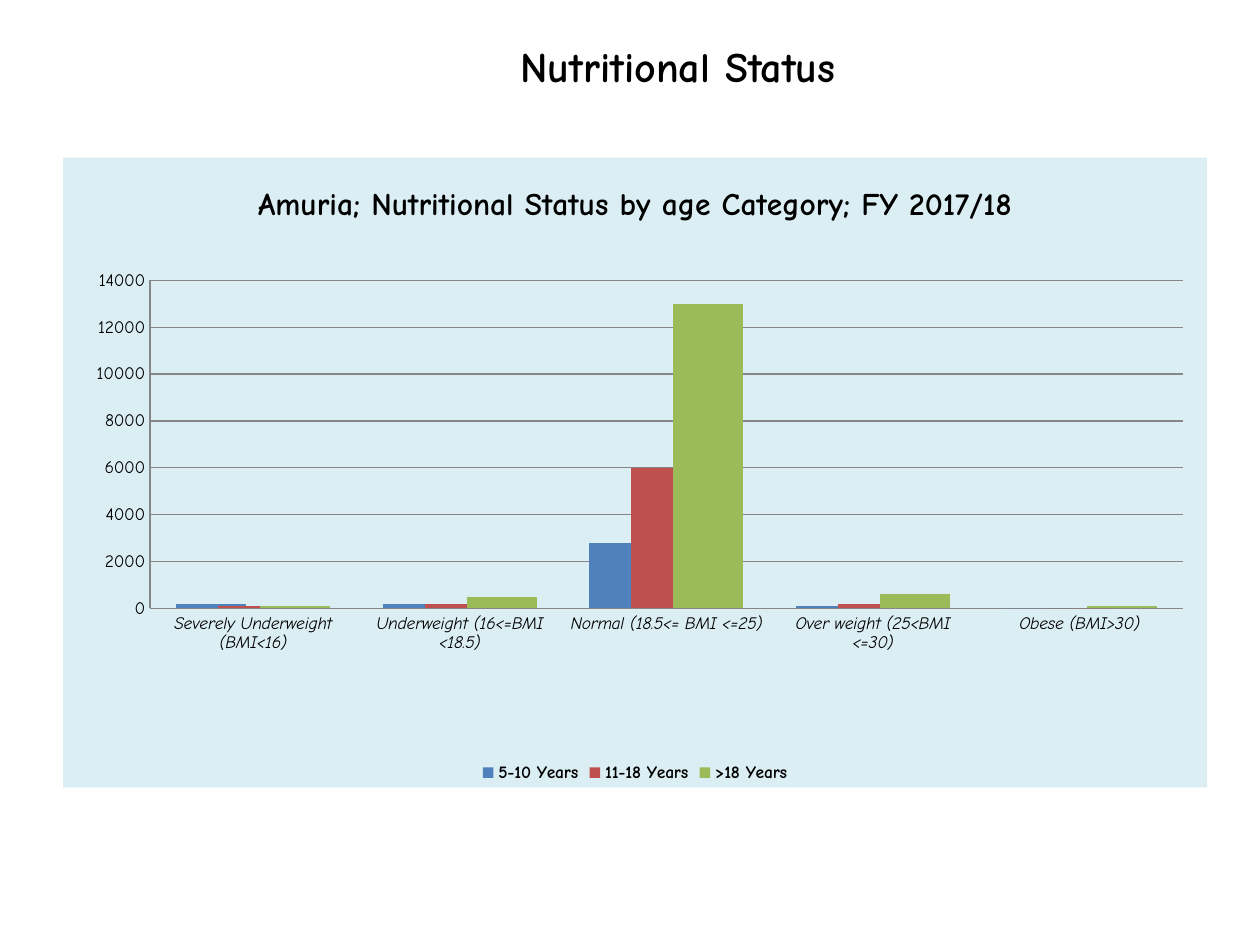
from lxml import etree
from pptx import Presentation
from pptx.chart.data import CategoryChartData
from pptx.dml.color import RGBColor
from pptx.enum.chart import XL_CHART_TYPE, XL_LEGEND_POSITION, XL_TICK_MARK
from pptx.enum.text import MSO_ANCHOR, PP_ALIGN
from pptx.oxml import parse_xml
from pptx.oxml.ns import nsdecls, qn
from pptx.util import Inches, Pt

FONT = "Comic Neue"
COLORS = {
    "background": "FFFFFF", "text": "000000", "panel": "DBEEF4", "grid": "868686",
    "5-10 Years": "4F81BD", "11-18 Years": "C0504D", ">18 Years": "9BBB59",
}
CATEGORIES = [
    "Severely Underweight (BMI<16)", "Underweight (16<=BMI <18.5)",
    "Normal (18.5<= BMI <=25)", "Over weight (25<BMI <=30)", "Obese (BMI>30)",
]
COUNTS = {
    "5-10 Years": [200, 200, 2800, 100, 0],
    "11-18 Years": [100, 200, 6000, 200, 0],
    ">18 Years": [100, 500, 13000, 600, 100],
}


def color(name):
    return RGBColor.from_string(COLORS[name])


def style_font(font, size, bold=False, italic=False):
    font.name, font.size = FONT, Pt(size)
    font.bold, font.italic = bold, italic
    font.color.rgb = color("text")


def write_text(frame, text, size, **style):
    frame.text = text
    para = frame.paragraphs[0]
    para.alignment = PP_ALIGN.CENTER
    style_font(para.runs[0].font, size, **style)


def add_heading(page, box, text):
    title = page.shapes.title
    title.left, title.top, title.width, title.height = box
    title.text_frame.vertical_anchor = MSO_ANCHOR.MIDDLE
    write_text(title.text_frame, text, 24, bold=True)


def place_plot(chart, **shares):
    """Fix the inner plot area as shares x, y, w and h of the chart."""
    area = chart._chartSpace.chart.plotArea
    for old in area.findall(qn("c:layout")):
        area.remove(old)
    layout = etree.Element(qn("c:layout"))
    manual = etree.SubElement(layout, qn("c:manualLayout"))
    settings = {"layoutTarget": "inner", "xMode": "edge", "yMode": "edge", **shares}
    for tag, value in settings.items():
        etree.SubElement(manual, qn(f"c:{tag}")).set("val", str(value))
    area.insert(0, layout)


def fill_panel(chart):
    chart._chartSpace.chart.addnext(parse_xml(
        f'<c:spPr {nsdecls("c", "a")}><a:solidFill><a:srgbClr val="{COLORS["panel"]}"/>'
        "</a:solidFill><a:ln><a:noFill/></a:ln></c:spPr>"))


def style_axes(chart):
    for axis in (chart.category_axis, chart.value_axis):
        axis.major_tick_mark = axis.minor_tick_mark = XL_TICK_MARK.NONE
        axis.format.line.color.rgb = color("grid")
        axis.format.line.width = Pt(0.75)
        style_font(axis.tick_labels.font, 10, italic=axis is chart.category_axis)
    style_font(chart.category_axis.tick_labels.font, 10, italic=True)
    values = chart.value_axis
    values.minimum_scale, values.maximum_scale, values.major_unit = 0, 14000, 2000
    values.has_major_gridlines = True
    values.major_gridlines.format.line.color.rgb = color("grid")
    values.major_gridlines.format.line.width = Pt(0.75)


def add_status_chart(page, box, title):
    data = CategoryChartData(number_format="General")
    data.categories = CATEGORIES
    for name, counts in COUNTS.items():
        data.add_series(name, counts)
    chart = page.shapes.add_chart(XL_CHART_TYPE.COLUMN_CLUSTERED, *box, data).chart
    style_font(chart.font, 10)
    chart.has_title = True
    write_text(chart.chart_title.text_frame, title, 18, bold=True)
    chart.chart_title.include_in_layout = False

    plot = chart.plots[0]
    plot.gap_width, plot.overlap, plot.vary_by_categories = 75, 40, False
    for series in plot.series:
        series.format.fill.solid()
        series.format.fill.fore_color.rgb = color(series.name)

    style_axes(chart)
    chart.has_legend = True
    chart.legend.position = XL_LEGEND_POSITION.BOTTOM
    chart.legend.include_in_layout = False
    style_font(chart.legend.font, 10, bold=True)
    place_plot(chart, x=0.076, y=0.195, w=0.903, h=0.521)
    fill_panel(chart)


def main():
    deck = Presentation()
    deck.slide_width, deck.slide_height = Inches(10), Inches(7.5)
    page = deck.slides.add_slide(deck.slide_layouts[5])
    page.background.fill.solid()
    page.background.fill.fore_color.rgb = color("background")
    add_heading(page, [Inches(n) for n in (1.17, 0.13, 8.42, 0.78)],
                "Nutritional Status")
    add_status_chart(page, [Inches(n) for n in (0.5, 1.25, 9.08, 5)],
                     "Amuria; Nutritional Status by age Category; FY 2017/18")
    deck.save("out.pptx")


if __name__ == "__main__":
    main()
